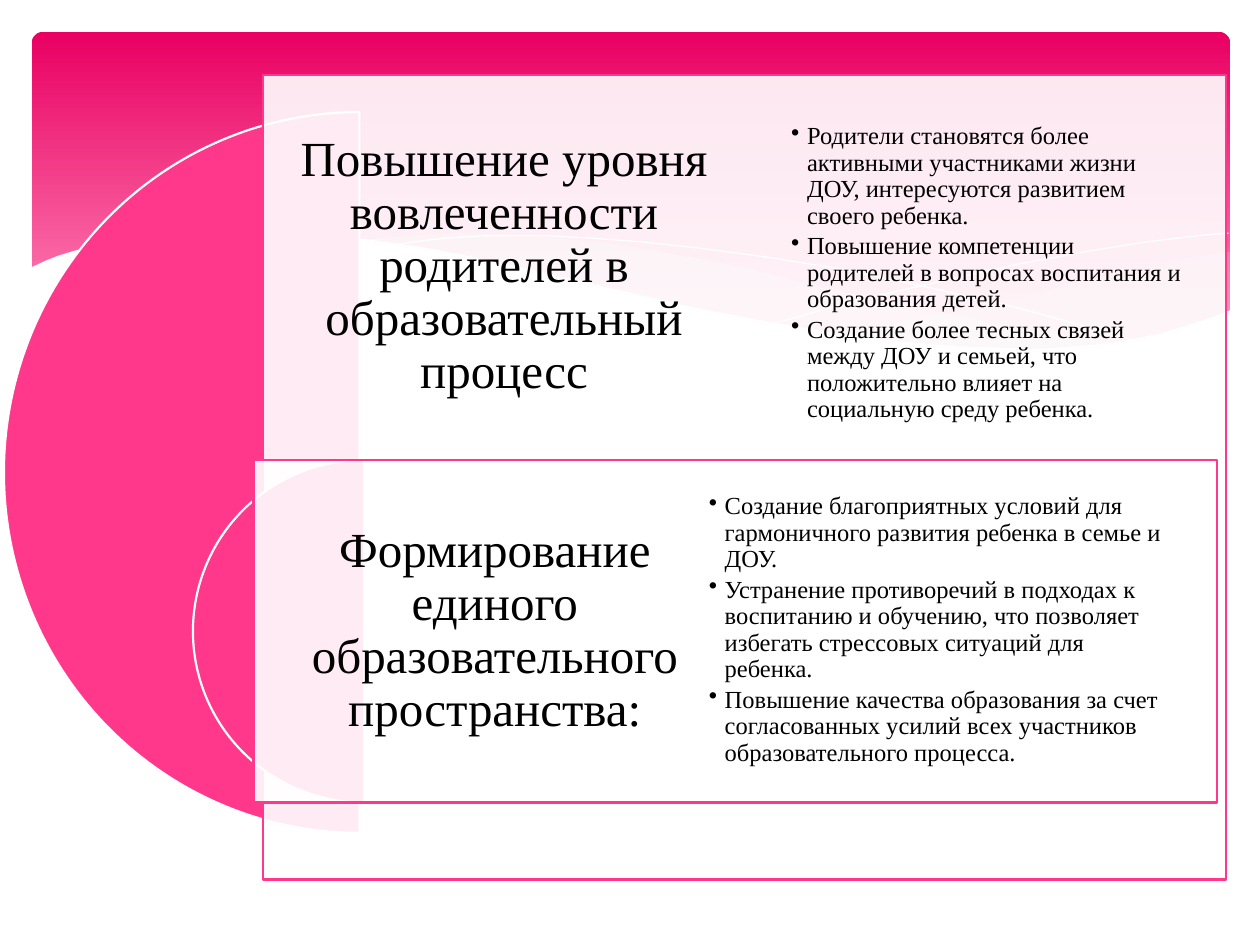
from lxml import etree
from pptx import Presentation
from pptx.dml.color import RGBColor
from pptx.enum.shapes import MSO_SHAPE
from pptx.enum.text import MSO_ANCHOR, PP_ALIGN
from pptx.oxml.ns import qn
from pptx.util import Cm, Pt

ROUND, RECT, PIE = MSO_SHAPE.ROUNDED_RECTANGLE, MSO_SHAPE.RECTANGLE, MSO_SHAPE.PIE
MIDDLE = MSO_ANCHOR.MIDDLE
LEFT, CENTER = PP_ALIGN.LEFT, PP_ALIGN.CENTER
PINK = RGBColor(0xFF, 0x38, 0x8C)
DEEP = RGBColor(0xE9, 0x00, 0x62)
PALE = RGBColor(0xFF, 0x88, 0xBA)
GRAY = RGBColor(0xD2, 0xD2, 0xD2)
WHITE = RGBColor(0xFF, 0xFF, 0xFF)
BLACK = RGBColor(0, 0, 0)
FONT = "Times New Roman"
UNIT = Cm(2.54) / 100


def paint(shape, fill=None, line=None, width=1.25, alpha=None):
    shape.shadow.inherit = False
    if fill is None:
        shape.fill.background()
    else:
        shape.fill.solid()
        shape.fill.fore_color.rgb = fill
    if alpha:
        tone = shape.fill._xPr.find(qn("a:solidFill"))[0]
        etree.SubElement(tone, qn("a:alpha"), val=str(alpha * 1000))
    if line is None:
        shape.line.fill.background()
    else:
        shape.line.color.rgb = line
        shape.line.width = Pt(width)


def write(text, box, size=14, pad=0.68, align=LEFT, bullet=False, after=0):
    frame = slide.shapes.add_textbox(*[Cm(n) for n in box]).text_frame
    frame.word_wrap = True
    frame.vertical_anchor = MIDDLE
    frame.margin_left = frame.margin_right = Cm(pad)
    frame.margin_top = frame.margin_bottom = Cm(pad)
    for i, item in enumerate(text):
        para = frame.add_paragraph() if i else frame.paragraphs[0]
        para.alignment = align
        para.line_spacing = 0.9
        para.space_after = Pt(after)
        if bullet:
            props = para._p.get_or_add_pPr()
            props.set("marL", str(Cm(0.32)))
            props.set("indent", str(-Cm(0.32)))
            etree.SubElement(props, qn("a:buChar"), char="•")
        run = para.add_run()
        run.text = item
        run.font.name = FONT
        run.font.size = Pt(size)
        run.font.color.rgb = BLACK


deck = Presentation()
deck.slide_width, deck.slide_height = Cm(25.4), Cm(19.05)
slide = deck.slides.add_slide(deck.slide_layouts[6])

band = slide.shapes.add_shape(ROUND, Cm(0.64), Cm(0.64), Cm(24.16), Cm(6.86))
band.adjustments[0] = 0.034
paint(band)
band.fill.gradient()
band.fill.gradient_angle = 270
for stop, tone, spot in zip(band.fill.gradient_stops, (DEEP, PALE), (0, 0.9)):
    stop.color.rgb = tone
    stop.position = spot

waves = [
    ([(976, 200), (948, 204), (921, 210), (891, 216), (861, 223), (805, 237),
      (753, 248), (706, 257), (661, 265), (691, 269), (719, 272), (745, 275),
      (781, 277), (814, 278), (844, 277), (872, 274), (897, 270), (921, 265),
      (942, 259), (963, 252), (976, 247)], GRAY, None, 29),
    ([(893, 273), (866, 269), (807, 260), (741, 247), (668, 231), (629, 222),
      (598, 214), (569, 208), (541, 203), (514, 198), (489, 194), (442, 189),
      (399, 186), (361, 185), (328, 187), (299, 189), (286, 191), (323, 196),
      (362, 203), (404, 211), (449, 222), (530, 240), (601, 255), (650, 264),
      (695, 270), (736, 275), (773, 277), (807, 278), (838, 278), (867, 276)],
     GRAY, None, 40),
    ([(309, 195), (328, 192), (353, 189), (387, 187), (433, 187), (469, 189),
      (510, 192), (556, 197), (608, 204), (665, 213), (727, 226), (795, 241),
      (869, 261), (907, 272)], None, WHITE, None),
    ([(613, 257), (653, 246), (695, 235), (748, 223), (806, 210), (866, 199),
      (910, 192), (951, 187), (975, 185)], None, WHITE, None),
    ([(977, 246), (959, 253), (940, 259), (920, 265), (899, 269), (875, 273),
      (850, 275), (823, 277), (793, 276), (761, 275), (726, 272), (688, 268),
      (648, 262), (603, 254), (555, 245), (503, 233), (447, 220), (391, 207),
      (340, 197), (292, 190), (250, 186), (211, 184), (177, 184), (146, 185),
      (119, 187), (95, 191), (76, 195), (59, 199), (46, 203), (36, 207),
      (23, 213), (23, 329), (977, 329)], WHITE, None, None),
]
for dots, fill, line, alpha in waves:
    path = slide.shapes.build_freeform(*dots[0], scale=UNIT)
    path.add_line_segments(dots[1:], close=fill is not None)
    paint(path.convert_to_shape(), fill, line, 0, alpha)

parts = [
    ((0.08, 2.26, 14.33, 14.53), (5.31, 1.52, 19.41, 16.21), (5.31, 1.52, 9.7, 7.7),
     "Повышение уровня вовлеченности родителей в образовательный процесс"),
    ((3.89, 9.27, 6.91, 6.91), (5.11, 9.27, 19.43, 6.91), (5.11, 9.27, 9.73, 6.91),
     "Формирование единого образовательного пространства:"),
]
for disc, card, box, title in parts:
    half = slide.shapes.add_shape(PIE, *[Cm(n) for n in disc])
    half.adjustments[0], half.adjustments[1] = 54, 162
    paint(half, PINK, WHITE)
    panel = slide.shapes.add_shape(RECT, *[Cm(n) for n in card])
    paint(panel, WHITE, PINK, alpha=90)
    write([title], box, size=28, pad=0.3, align=CENTER)

lists = [
    ((15.27, 2.06, 9.27, 6.91), [
        "Родители становятся более активными участниками жизни ДОУ, интересуются развитием своего ребенка.",
        "Повышение компетенции родителей в вопросах воспитания и образования детей.",
        "Создание более тесных связей между ДОУ и семьей, что положительно влияет на социальную среду ребенка.",
    ]),
    ((13.61, 9.25, 10.69, 6.91), [
        "Создание благоприятных условий для гармоничного развития ребенка в семье и ДОУ.",
        "Устранение противоречий в подходах к воспитанию и обучению, что позволяет избегать стрессовых ситуаций для ребенка.",
        "Повышение качества образования за счет согласованных усилий всех участников образовательного процесса.",
    ]),
]
for box, items in lists:
    write(items, box, bullet=True, after=2.3)

deck.save("out.pptx")
